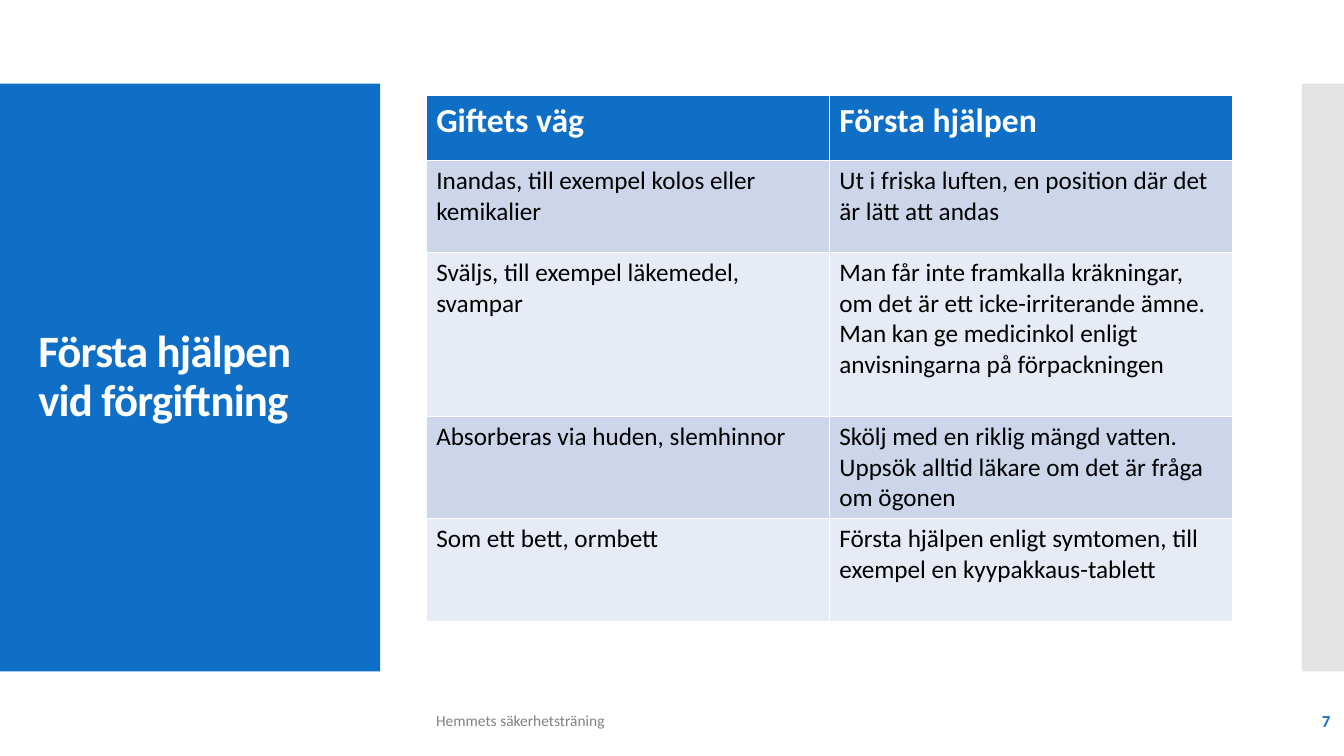
"""Build the slide on first aid for poisoning."""
from lxml import etree
from pptx import Presentation
from pptx.dml.color import RGBColor
from pptx.enum.shapes import MSO_SHAPE
from pptx.enum.text import MSO_ANCHOR, MSO_AUTO_SIZE, PP_ALIGN
from pptx.oxml.ns import qn
from pptx.util import Cm, Pt

RECT = MSO_SHAPE.RECTANGLE
MIDDLE = MSO_ANCHOR.MIDDLE
FIXED = MSO_AUTO_SIZE.NONE
LEFT, RIGHT = PP_ALIGN.LEFT, PP_ALIGN.RIGHT

BLUE = RGBColor(0x0F, 0x6F, 0xC6)
SILVER = RGBColor(0xC8, 0xC8, 0xC8)
GRAY = RGBColor(0x80, 0x80, 0x80)
WHITE = RGBColor(0xFF, 0xFF, 0xFF)
BLACK = RGBColor(0, 0, 0)
BANDS = [RGBColor(0xE7, 0xEB, 0xF5), RGBColor(0xCC, 0xD5, 0xEA)]

ROWS = [
    ("Giftets väg", "Första hjälpen"),
    ("Inandas, till exempel kolos eller kemikalier",
     "Ut i friska luften, en position där det är lätt att andas"),
    ("Sväljs, till exempel läkemedel, svampar",
     "Man får inte framkalla kräkningar, om det är ett icke-irriterande ämne. "
     "Man kan ge medicinkol enligt anvisningarna på förpackningen"),
    ("Absorberas via huden, slemhinnor",
     "Skölj med en riklig mängd vatten. "
     "Uppsök alltid läkare om det är fråga om ögonen"),
    ("Som ett bett, ormbett",
     "Första hjälpen enligt symtomen, till exempel en kyypakkaus-tablett"),
]
HEIGHTS = [1.65, 2.31, 4.13, 2.57, 2.59]
FOOTERS = [
    ("Hemmets säkerhetsträning", 10.74, 16.4, 11, GRAY, False, LEFT),
    ("7", 29.54, 4.24, 12, BLUE, True, RIGHT),
]


def style(para, size, color, bold):
    font = para.font
    font.name = "Calibri"
    font.size = Pt(size)
    font.color.rgb = color
    font.bold = bold


deck = Presentation()
deck.slide_width, deck.slide_height = Cm(33.87), Cm(19.05)
slide = deck.slides.add_slide(deck.slide_layouts[5])
shapes = slide.shapes

for left, width, color in [(0, 9.58, BLUE), (32.81, 1.06, SILVER)]:
    bar = shapes.add_shape(RECT, Cm(left), Cm(2.11), Cm(width), Cm(14.81))
    bar.shadow.inherit = False
    bar.fill.solid()
    bar.fill.fore_color.rgb = color
    bar.line.fill.background()
    if color == SILVER:
        tint = bar.element.find(".//" + qn("a:srgbClr"))
        etree.SubElement(tint, qn("a:alpha"), val="50000")

title = shapes.title
title.element.getparent().append(title.element)
title.left, title.top = Cm(0.71), Cm(3.12)
title.width, title.height = Cm(8.18), Cm(12.78)
title.text = "Första hjälpen vid förgiftning"
frame = title.text_frame
frame.auto_size = FIXED
frame.word_wrap = True
frame.vertical_anchor = MIDDLE
para = frame.paragraphs[0]
para.alignment = LEFT
para.line_spacing = 0.9
style(para, 32, WHITE, True)
para.runs[0].font._element.set("spc", "-60")

table = shapes.add_table(len(ROWS), 2, Cm(10.74), Cm(2.4),
                         Cm(20.32), Cm(sum(HEIGHTS))).table
for i, (texts, height) in enumerate(zip(ROWS, HEIGHTS)):
    head = i == 0
    table.rows[i].height = Cm(height)
    for cell, text in zip(table.rows[i].cells, texts):
        cell.text = text
        cell.fill.solid()
        cell.fill.fore_color.rgb = BLUE if head else BANDS[i % 2]
        style(cell.text_frame.paragraphs[0], 24 if head else 18,
              WHITE if head else BLACK, head)

for text, left, width, size, color, bold, align in FOOTERS:
    box = shapes.add_textbox(Cm(left), Cm(17.65), Cm(width), Cm(1.02))
    frame = box.text_frame
    frame.text = text
    frame.word_wrap = True
    frame.vertical_anchor = MIDDLE
    para = frame.paragraphs[0]
    para.alignment = align
    style(para, size, color, bold)

deck.save("out.pptx")
